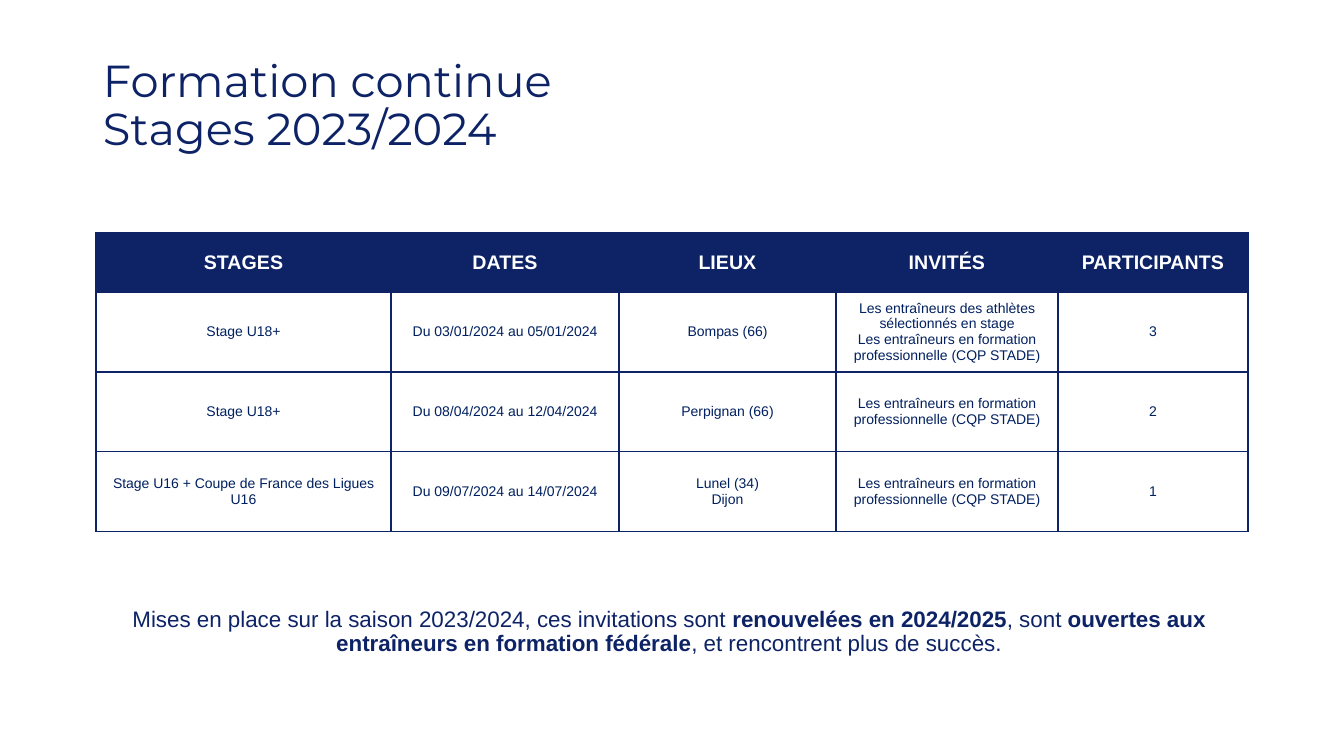
from lxml import etree
from pptx import Presentation, util as u
from pptx.dml.color import RGBColor
from pptx.enum import text
from pptx.oxml import ns

PX = 12192000 / 1344
NAVY, INK, WHITE = "0D2366", "002060", "FFFFFF"


def px(*sizes):
    """Turn pixel lengths into EMU."""
    return [u.Emu(round(size * PX)) for size in sizes]


def style(para, face, size, color, bold=False):
    font = para.font
    font.name, font.size, font.bold = face, u.Pt(size), bold
    font.color.rgb = RGBColor.from_string(color)


deck = Presentation()
deck.slide_width, deck.slide_height = px(1344, 756)
slide = deck.slides.add_slide(deck.slide_layouts[6])

# Title
frame = slide.shapes.add_textbox(*px(93, 40, 1089, 134)).text_frame
frame.word_wrap = True
frame.vertical_anchor = text.MSO_ANCHOR.MIDDLE
title = frame.paragraphs[0]
title.text = "Formation continue\vStages 2023/2024"
title.line_spacing = 0.9
style(title, "Montserrat", 32, NAVY)

# Table of courses
pro = "Les entraîneurs en formation professionnelle (CQP STADE)"
both = "Les entraîneurs des athlètes sélectionnés en stage\n" + pro
rows = [
    ["STAGES", "DATES", "LIEUX", "INVITÉS", "PARTICIPANTS"],
    ["Stage U18+", "Du 03/01/2024 au 05/01/2024", "Bompas (66)", both, "3"],
    ["Stage U18+", "Du 08/04/2024 au 12/04/2024", "Perpignan (66)", pro, "2"],
    ["Stage U16 + Coupe de France des Ligues U16",
     "Du 09/07/2024 au 14/07/2024", "Lunel (34)\nDijon", pro, "1"],
]
widths = [295, 228, 217, 222, 190]
heights = [59] + [80] * 3
table = slide.shapes.add_table(
    len(rows), len(widths), *px(96, 233, sum(widths), sum(heights))).table
table.horz_banding = False
for col, width in zip(table.columns, px(*widths)):
    col.width = width
for row, height in zip(table.rows, px(*heights)):
    row.height = height

for r, row in enumerate(rows):
    for c, words in enumerate(row):
        cell = table.cell(r, c)
        cell.text = words
        cell.vertical_anchor = text.MSO_ANCHOR.MIDDLE
        props = cell._tc.get_or_add_tcPr()
        for side in ("lnL", "lnR", "lnT", "lnB"):
            line = etree.SubElement(props, ns.qn("a:" + side), w="12700")
            fill = etree.SubElement(line, ns.qn("a:solidFill"))
            etree.SubElement(fill, ns.qn("a:srgbClr"), val=NAVY)
        if r == 0:
            cell.fill.solid()
            cell.fill.fore_color.rgb = RGBColor.from_string(NAVY)
        else:
            cell.fill.background()
        for para in cell.text_frame.paragraphs:
            para.alignment = text.PP_ALIGN.CENTER
            if r == 0:
                style(para, "Arial", 14, WHITE, True)
            else:
                style(para, "Arial", 10, INK)

# Closing note, with every second part in bold
frame = slide.shapes.add_textbox(*px(93, 603, 1152, 72)).text_frame
frame.word_wrap = True
note = frame.paragraphs[0]
note.alignment = text.PP_ALIGN.CENTER
note.line_spacing = 0.9
style(note, "Arial", 16, NAVY)
parts = [
    "Mises en place sur la saison 2023/2024, ces invitations sont ",
    "renouvelées en 2024/2025",
    ", sont ",
    "ouvertes aux entraîneurs en formation fédérale",
    ", et rencontrent plus de succès.",
]
for i, part in enumerate(parts):
    run = note.add_run()
    run.text = part
    run.font.bold = i % 2 == 1

deck.save("out.pptx")
